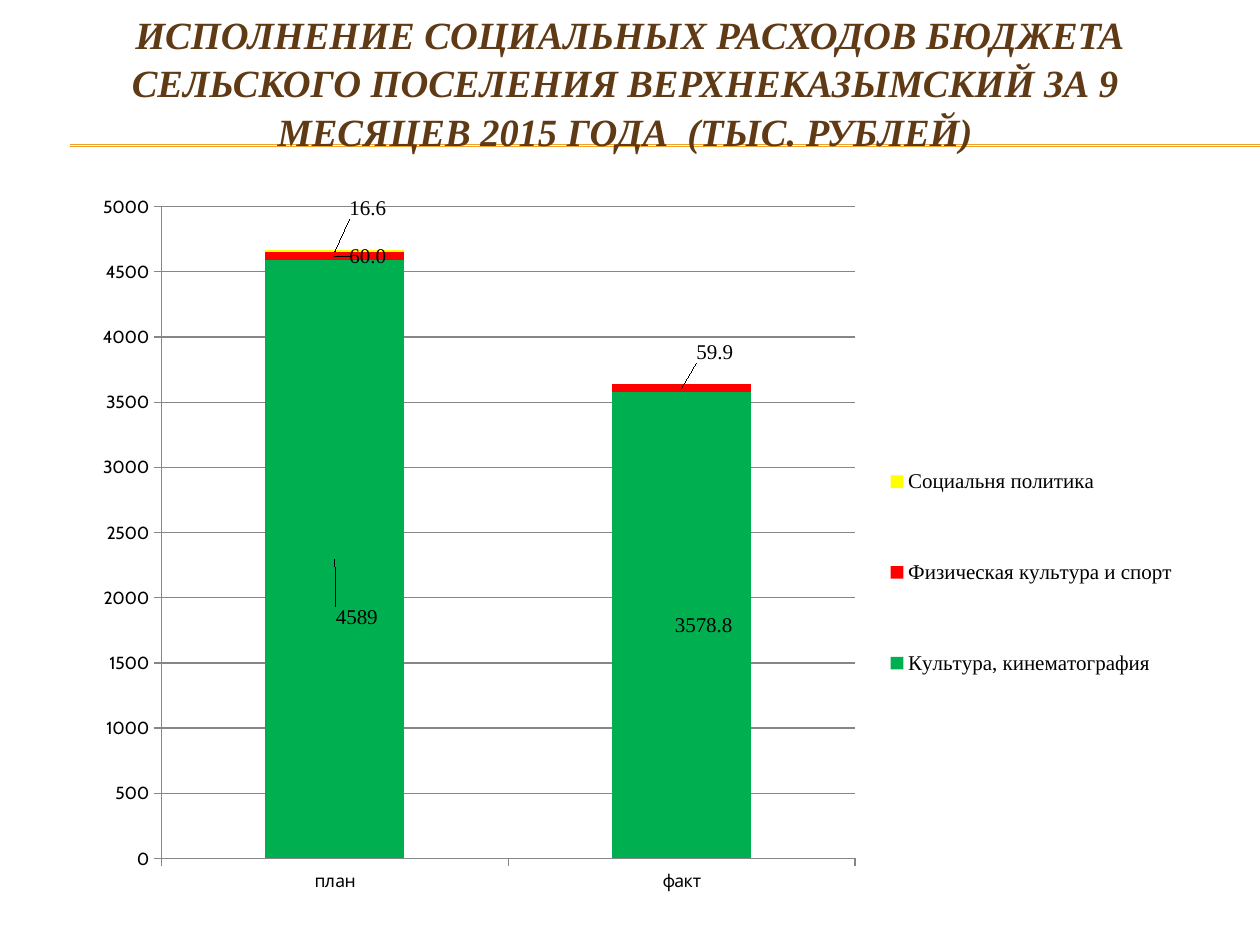
import lxml.etree
import pptx
import pptx.chart.data
import pptx.dml.color
import pptx.enum.chart
import pptx.enum.shapes
import pptx.enum.text
import pptx.oxml.ns
import pptx.util
from pptx.util import Cm

SERIF = "Times New Roman"
GREY = "868686"
CATEGORIES = ["план", "факт"]
# name, values, colour, number format, label shifts as fractions of the chart
EXPENSES = [
    ("Культура, кинематография", [4589, 3578.8], "00B050", "General",
     [(0.02, 0.08), (0.02, 0)]),
    ("Физическая культура и спорт", [60, 59.9], "FF0000", "0.0",
     [(0.03, 0), (0.03, -0.05)]),
    ("Социальня политика", [16.6, None], "FFFF00", "General",
     [(0.03, -0.06)]),
]


def rgb(value):
    return pptx.dml.color.RGBColor.from_string(value)


def style_font(font, size, name, color="000000"):
    font.size, font.name = pptx.util.Pt(size), name
    font.color.rgb = rgb(color)


def set_layout(parent, position, **values):
    """Give a chart part a manual layout as its child at this position."""
    qn = pptx.oxml.ns.qn
    for old in parent.findall(qn("c:layout")):
        parent.remove(old)
    layout = lxml.etree.Element(qn("c:layout"))
    manual = lxml.etree.SubElement(layout, qn("c:manualLayout"))
    for tag, value in values.items():
        lxml.etree.SubElement(manual, qn("c:" + tag)).set("val", str(value))
    parent.insert(position, layout)


def add_rules(slide, left, top, width, height):
    """Draw two thin lines along the top and bottom of the box."""
    for y in (top, top + height):
        rule = slide.shapes.add_connector(
            pptx.enum.shapes.MSO_CONNECTOR.STRAIGHT, left, y, left + width, y)
        rule.line.color.rgb = rgb("F0A22E")
        rule.line.width = pptx.util.Pt(0.75)
        lxml.etree.SubElement(rule._element.spPr, pptx.oxml.ns.qn("a:effectLst"))


def place_title(slide, left, top, width, height):
    title = slide.shapes.title
    title.left, title.top, title.width, title.height = left, top, width, height
    slide.shapes._spTree.append(title._element)  # in front of the rules
    frame = title.text_frame
    frame.text = (" ИСПОЛНЕНИЕ СОЦИАЛЬНЫХ РАСХОДОВ БЮДЖЕТА СЕЛЬСКОГО ПОСЕЛЕНИЯ "
                  "ВЕРХНЕКАЗЫМСКИЙ ЗА 9 МЕСЯЦЕВ 2015 ГОДА  (ТЫС. РУБЛЕЙ)")
    frame.word_wrap = True
    frame.auto_size = pptx.enum.text.MSO_AUTO_SIZE.NONE
    frame.vertical_anchor = pptx.enum.text.MSO_ANCHOR.MIDDLE
    paragraph = frame.paragraphs[0]
    paragraph.alignment = pptx.enum.text.PP_ALIGN.CENTER
    paragraph.line_spacing = 1.05
    style_font(paragraph.font, 22, SERIF, "603A14")
    paragraph.font.bold = paragraph.font.italic = True


def format_axes(chart):
    for axis in (chart.category_axis, chart.value_axis):
        axis.major_tick_mark = pptx.enum.chart.XL_TICK_MARK.OUTSIDE
        axis.minor_tick_mark = pptx.enum.chart.XL_TICK_MARK.NONE
        axis.format.line.color.rgb = rgb(GREY)
    values = chart.value_axis
    values.minimum_scale, values.maximum_scale, values.major_unit = 0, 5000, 500
    values.has_major_gridlines = True
    values.major_gridlines.format.line.color.rgb = rgb(GREY)
    values.tick_labels.number_format = "General"
    values.tick_labels.number_format_is_linked = False


def format_series(series, color, number_format, shifts):
    series.format.fill.solid()
    series.format.fill.fore_color.rgb = rgb(color)
    labels = series.data_labels
    labels.show_value = True
    labels.number_format = number_format
    labels.number_format_is_linked = False
    style_font(labels.font, 12, SERIF)
    for index, (x, y) in enumerate(shifts):
        style_font(series.points[index].data_label.font, 12, SERIF)
    for label, (x, y) in zip(series._element.xpath("c:dLbls/c:dLbl"), shifts):
        set_layout(label, 1, x=x, y=y)
        number = lxml.etree.Element(pptx.oxml.ns.qn("c:numFmt"))
        number.set("formatCode", number_format)
        number.set("sourceLinked", "0")
        label.insert(2, number)


def add_expense_chart(slide, left, top, width, height):
    data = pptx.chart.data.CategoryChartData()
    data.categories = CATEGORIES
    for name, values, color, number_format, shifts in EXPENSES:
        data.add_series(name, values, number_format)
    chart = slide.shapes.add_chart(
        pptx.enum.chart.XL_CHART_TYPE.COLUMN_STACKED,
        left, top, width, height, data).chart
    chart.has_title = False
    style_font(chart.font, 10, "Cabin")
    format_axes(chart)

    plot = chart.plots[0]
    plot.gap_width, plot.overlap = 150, 100
    plot.vary_by_categories = False
    for series, (name, values, *look) in zip(plot.series, EXPENSES):
        format_series(series, *look)

    chart.has_legend = True
    chart.legend.position = pptx.enum.chart.XL_LEGEND_POSITION.RIGHT
    chart.legend.include_in_layout = False
    style_font(chart.legend.font, 12, SERIF)
    set_layout(chart.legend._element, 1, xMode="edge", yMode="edge",
               x=0.72, y=0.3, w=0.28, h=0.47)
    set_layout(chart._chartSpace.chart.plotArea, 0, layoutTarget="inner",
               xMode="edge", yMode="edge", x=0.07, y=0.03, w=0.63, h=0.9)


def main():
    deck = pptx.Presentation()
    deck.slide_width, deck.slide_height = Cm(25.4), Cm(19.05)
    slide = deck.slides.add_slide(deck.slide_layouts[5])
    add_rules(slide, Cm(1.42), Cm(2.92), Cm(23.98), Cm(0.03))
    place_title(slide, Cm(0.5), Cm(0.53), Cm(24.2), Cm(2.21))
    add_expense_chart(slide, Cm(1.7), Cm(3.73), Cm(22.2), Cm(14.6))
    deck.save("out.pptx")


if __name__ == "__main__":
    main()
